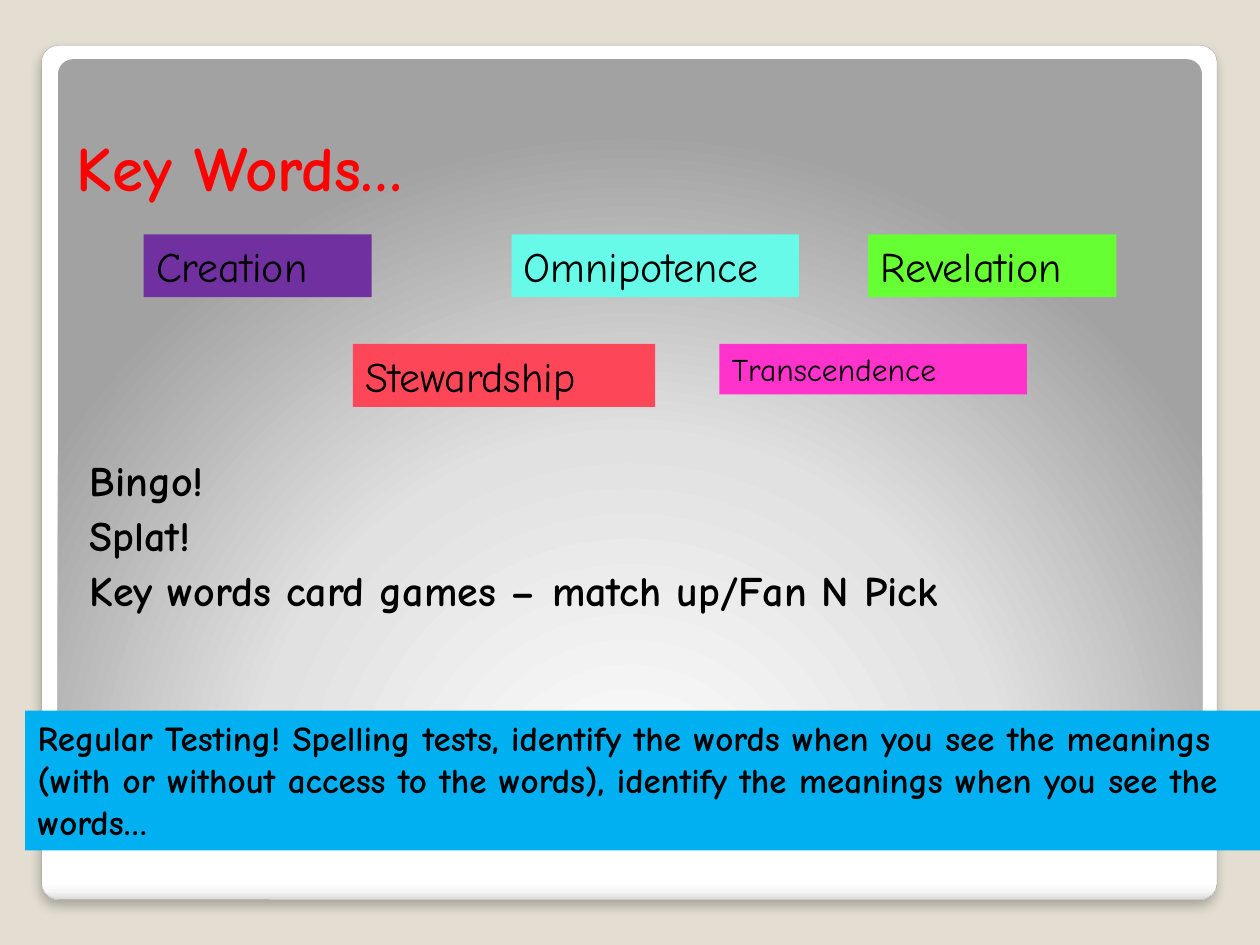
"""Build a slide of religious-studies key words with games and testing ideas."""
from lxml import etree
from pptx import Presentation, util as u
from pptx.dml.color import RGBColor
from pptx.enum import shapes, text
from pptx.oxml import ns

THEME = {
    "font": "Comic Neue", "back": "E3DED1", "edge": "A4A4A4",
    "title": "FF0000", "ink": "000000", "bar": "00B0F0",
    "frame": [(0, "FFFFFF"), (98, "FFFFFF"), (99, "F7F7F7"), (100, "DADADA")],
    "panel": [(0, "FFFFFF"), (55, "E1E1E1"), (100, "A2A2A2")],
    "title_size": 36, "word_size": 24, "small_size": 18, "bar_size": 20,
}
TITLE = "Key Words…"
GAMES = ["Bingo!", "Splat!", "Key words card games – match up/Fan N Pick"]
TESTING = ("Regular Testing! Spelling tests, identify the words when you see the meanings "
           "(with or without access to the words), identify the meanings when you see the words…")
WORD_ROWS = [
    [("Creation", 1.14, 1.81, "7030A0", "word_size"),
     ("Omnipotence", 4.06, 2.28, "68FAE9", "word_size"),
     ("Revelation", 6.89, 1.97, "66FF33", "word_size")],
    [("Stewardship", 2.8, 2.4, "FD4758", "word_size"),
     ("Transcendence", 5.71, 2.44, "FF33CC", "small_size")],
]
ROW_TOP, ROW_STEP = 1.86, 0.87
WORD_HEIGHT = {"word_size": 0.5, "small_size": 0.4}
MARGIN, COLUMN = 0.51, 8.95
LINEAR = '<a:lin ang="5400000" scaled="0"/>'
GLOW = ('<a:path path="circle"><a:fillToRect l="50000" t="175000" '
        'r="50000" b="-75000"/></a:path>')
SHADOW = (f'<a:outerShdw {ns.nsdecls("a")} blurRad="76200" dist="50800" dir="5400000" '
          'rotWithShape="0"><a:srgbClr val="000000"><a:alpha val="25000"/>'
          '</a:srgbClr></a:outerShdw>')


def add_shape(s, box, kind, color):
    sp = s.shapes.add_shape(kind, *map(u.Inches, box))
    sp.shadow.inherit = False
    sp.fill.solid()
    sp.fill.fore_color.rgb = RGBColor.from_string(color)
    sp.line.fill.background()
    return sp


def add_card(s, box, stops, direction):
    sp = add_shape(s, box, shapes.MSO_SHAPE.ROUNDED_RECTANGLE, stops[0][1])
    sp.adjustments[0] = 0.02
    stop_xml = "".join(f'<a:gs pos="{pos * 1000}"><a:srgbClr val="{color}"/></a:gs>'
                       for pos, color in stops)
    gradient = etree.fromstring(
        f'<a:gradFill {ns.nsdecls("a")} rotWithShape="1">'
        f'<a:gsLst>{stop_xml}</a:gsLst>{direction}</a:gradFill>')
    spPr = sp._element.spPr
    spPr.replace(spPr.find(ns.qn("a:solidFill")), gradient)
    return sp


def add_text(s, lines, box, size, color=THEME["ink"], bold=False, fill=None,
             anchor=text.MSO_ANCHOR.TOP, left=0.1, top=0.05, before=0):
    if fill:
        sp = add_shape(s, box, shapes.MSO_SHAPE.RECTANGLE, fill)
    else:
        sp = s.shapes.add_textbox(*map(u.Inches, box))
    tf = sp.text_frame
    tf.word_wrap = True
    tf.vertical_anchor = anchor
    tf.margin_left, tf.margin_top = u.Inches(left), u.Inches(top)
    for i, line in enumerate(lines):
        p = tf.paragraphs[0] if i == 0 else tf.add_paragraph()
        p.alignment = text.PP_ALIGN.LEFT
        p.space_before = u.Pt(before)
        r = p.add_run()
        r.text = line
        r.font.name, r.font.size, r.font.bold = THEME["font"], u.Pt(size), bold
        r.font.color.rgb = RGBColor.from_string(color)
    return sp


def main():
    prs = Presentation()
    prs.slide_width, prs.slide_height = u.Inches(10), u.Inches(7.5)
    s = prs.slides.add_slide(prs.slide_layouts[6])
    s.background.fill.solid()
    s.background.fill.fore_color.rgb = RGBColor.from_string(THEME["back"])

    frame = add_card(s, (0.33, 0.36, 9.33, 6.78), THEME["frame"], LINEAR)
    frame.line.color.rgb = RGBColor.from_string(THEME["edge"])
    frame.line.width = u.Pt(0.16)
    effects = frame._element.spPr.find(ns.qn("a:effectLst"))
    effects.append(etree.fromstring(SHADOW))
    add_card(s, (0.46, 0.47, 9.08, 6), THEME["panel"], GLOW)

    add_text(s, [TITLE], (MARGIN, 0.52, COLUMN, 1.15), THEME["title_size"],
             color=THEME["title"], bold=True, anchor=text.MSO_ANCHOR.BOTTOM)
    add_text(s, GAMES, (MARGIN, 3.51, COLUMN, 2.85), THEME["word_size"],
             bold=True, left=0.2, top=0.1, before=2.5)
    add_text(s, [TESTING], (0.2, 5.64, 10, 1.11), THEME["bar_size"],
             bold=True, fill=THEME["bar"])
    for row, words in enumerate(WORD_ROWS):
        for word, x, width, color, size in words:
            box = (x, ROW_TOP + row * ROW_STEP, width, WORD_HEIGHT[size])
            add_text(s, [word], box, THEME[size], fill=color)
    prs.save("out.pptx")


if __name__ == "__main__":
    main()
